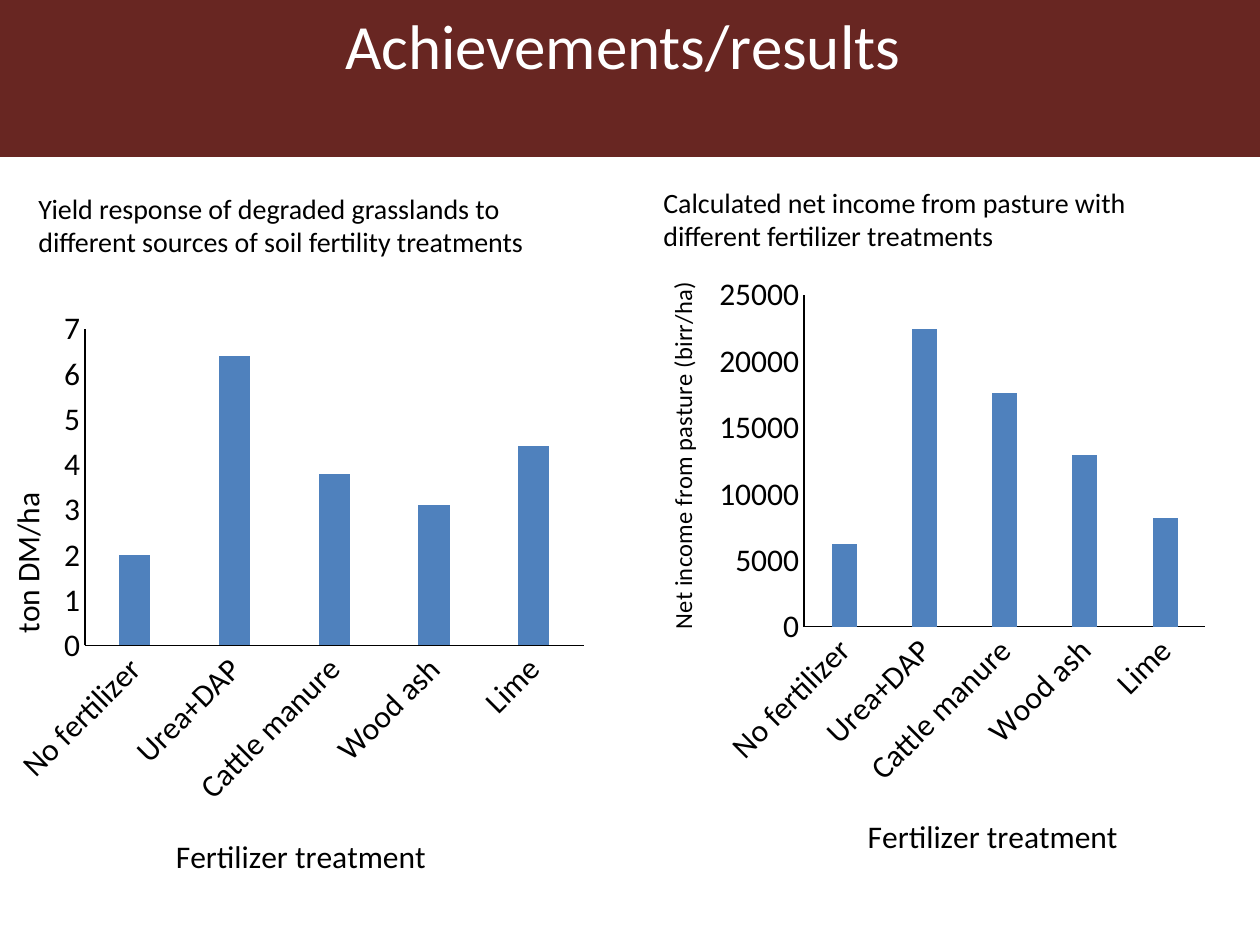
from lxml.etree import SubElement
from pptx import Presentation
from pptx.chart.data import CategoryChartData
from pptx.dml.color import RGBColor
from pptx.enum.chart import XL_CHART_TYPE, XL_TICK_MARK
from pptx.enum.shapes import MSO_SHAPE
from pptx.enum.text import MSO_ANCHOR, PP_ALIGN
from pptx.oxml.ns import qn
from pptx.util import Emu, Pt

PX = 914400 // 126
FONT = "Calibri"
MAROON = RGBColor(0x68, 0x26, 0x22)
BLUE = RGBColor(0x4F, 0x81, 0xBD)
BLACK = RGBColor(0, 0, 0)
WHITE = RGBColor(0xFF, 0xFF, 0xFF)
TREATMENTS = ["No fertilizer", "Urea+DAP", "Cattle manure", "Wood ash", "Lime"]


def emu(*lengths):
    """Turn px lengths into EMU."""
    return [Emu(length * PX) for length in lengths]


def set_font(font, size, color=BLACK):
    """Give a font the slide's typeface, plain weight, size and colour."""
    font.name, font.size, font.bold = FONT, Pt(size), False
    font.color.rgb = color


def add_text(slide, box, text, size, color=BLACK, align=PP_ALIGN.LEFT):
    """Place wrapped text at the top of a box."""
    frame = slide.shapes.add_textbox(*emu(*box)).text_frame
    frame.word_wrap = True
    frame.vertical_anchor = MSO_ANCHOR.TOP
    paragraph = frame.paragraphs[0]
    paragraph.text = text
    paragraph.alignment = align
    set_font(paragraph.font, size, color)


def add_header(slide, box):
    """Draw the title band with its centred title."""
    left, top, width, height = box
    band = slide.shapes.add_shape(MSO_SHAPE.RECTANGLE, *emu(*box))
    band.shadow.inherit = False
    band.fill.solid()
    band.fill.fore_color.rgb = MAROON
    band.line.fill.background()
    add_text(slide, (left + 63, top, width - 126, height),
             "Achievements/results ", 36, WHITE, PP_ALIGN.CENTER)


def set_layout(parent, index, fractions, inner=False):
    """Fix a chart part at fractions of the chart's size."""
    for old in parent.findall(qn("c:layout")):
        parent.remove(old)
    layout = parent.makeelement(qn("c:layout"), {})
    parent.insert(index, layout)
    manual = SubElement(layout, qn("c:manualLayout"))
    settings = [("layoutTarget", "inner")] if inner else []
    settings += [("xMode", "edge"), ("yMode", "edge")]
    settings += zip("xywh", fractions)
    for tag, value in settings:
        SubElement(manual, qn(f"c:{tag}")).set("val", str(value))


def style_axis(axis, title, title_size, title_place, title_turn):
    """Style an axis and place its title."""
    axis.has_major_gridlines = False
    axis.major_tick_mark = axis.minor_tick_mark = XL_TICK_MARK.NONE
    axis.format.line.color.rgb = BLACK
    axis.format.line.width = Pt(0.75)
    set_font(axis.tick_labels.font, 18)
    frame = axis.axis_title.text_frame
    frame.text = title
    set_font(frame.paragraphs[0].font, title_size)
    title_element = axis.axis_title._element
    title_element.find(".//" + qn("a:bodyPr")).set("rot", str(title_turn * 60000))
    set_layout(title_element, 1, title_place)


def add_yield_panel(slide, box, caption_box, caption, values, number_format, top_value,
                    step, plot, value_title, value_title_size, value_place, category_place):
    """Place a caption and its column chart, with inner parts in px from the chart's corner."""
    width, height = box[2:]

    def fractions(*lengths):
        return [round(length / side, 3)
                for length, side in zip(lengths, (width, height) * 2)]

    data = CategoryChartData(number_format=number_format)
    data.categories = TREATMENTS
    data.add_series("Series 1", values)
    chart = slide.shapes.add_chart(XL_CHART_TYPE.COLUMN_CLUSTERED, *emu(*box), data).chart
    chart.has_legend = chart.has_title = False
    set_font(chart.font, 18)

    columns = chart.plots[0]
    columns.gap_width, columns.overlap = 219, -27
    columns.vary_by_categories = False
    columns.series[0].format.fill.solid()
    columns.series[0].format.fill.fore_color.rgb = BLUE
    set_layout(chart._chartSpace.chart.plotArea, 0, fractions(*plot), inner=True)

    treatments, amounts = chart.category_axis, chart.value_axis
    style_axis(treatments, "Fertilizer treatment", 18, fractions(*category_place), 0)
    style_axis(amounts, value_title, value_title_size, fractions(*value_place), -90)
    labels = treatments._element.find(qn("c:txPr")).find(qn("a:bodyPr"))
    labels.set("rot", str(-45 * 60000))
    amounts.minimum_scale, amounts.maximum_scale, amounts.major_unit = 0, top_value, step
    amounts.tick_labels.number_format = "0"
    amounts.tick_labels.number_format_is_linked = False

    add_text(slide, caption_box, caption, 16)


def main():
    """Build and save the slide."""
    deck = Presentation()
    deck.slide_width, deck.slide_height = emu(1260, 945)
    slide = deck.slides.add_slide(deck.slide_layouts[6])
    add_header(slide, (0, 0, 1260, 157))
    add_yield_panel(
        slide, (-10, 273, 609, 620), (26, 185, 536, 81),
        "Yield response of degraded grasslands to different sources of soil fertility treatments",
        (2, 6.4, 3.8, 3.1, 4.4), "0.0", 7, 1, (95, 56, 499, 317),
        "ton DM/ha", 18, (10, 214), (180, 556))
    add_yield_panel(
        slide, (651, 262, 630, 609), (651, 179, 586, 81),
        "Calculated net income from pasture with different fertilizer treatments",
        (6200, 22400, 17600, 12900, 8200), "0", 25000, 5000, (153, 33, 401, 332),
        "Net income from pasture (birr/ha)", 14, (10, 16), (211, 547))
    deck.save("out.pptx")


if __name__ == "__main__":
    main()
